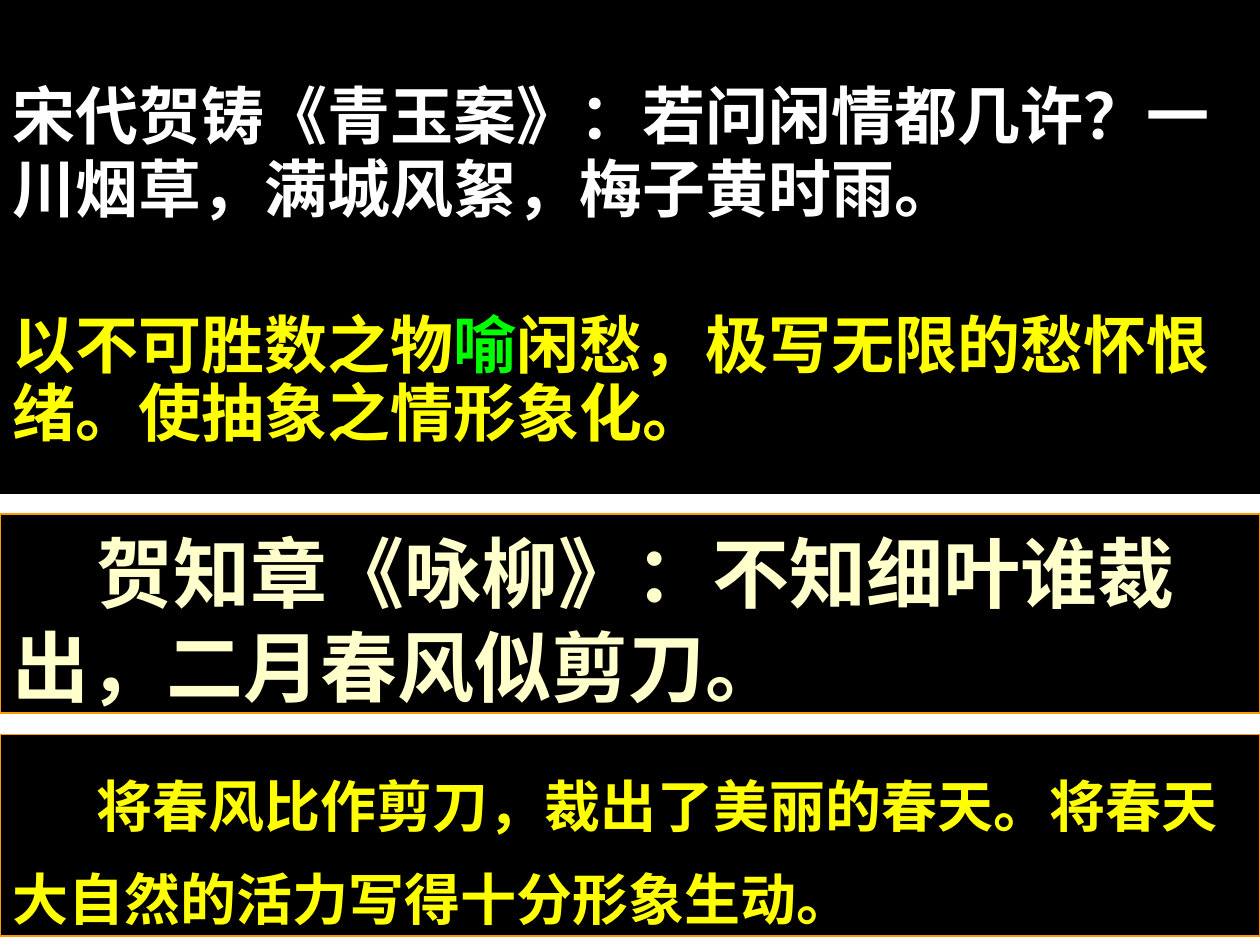
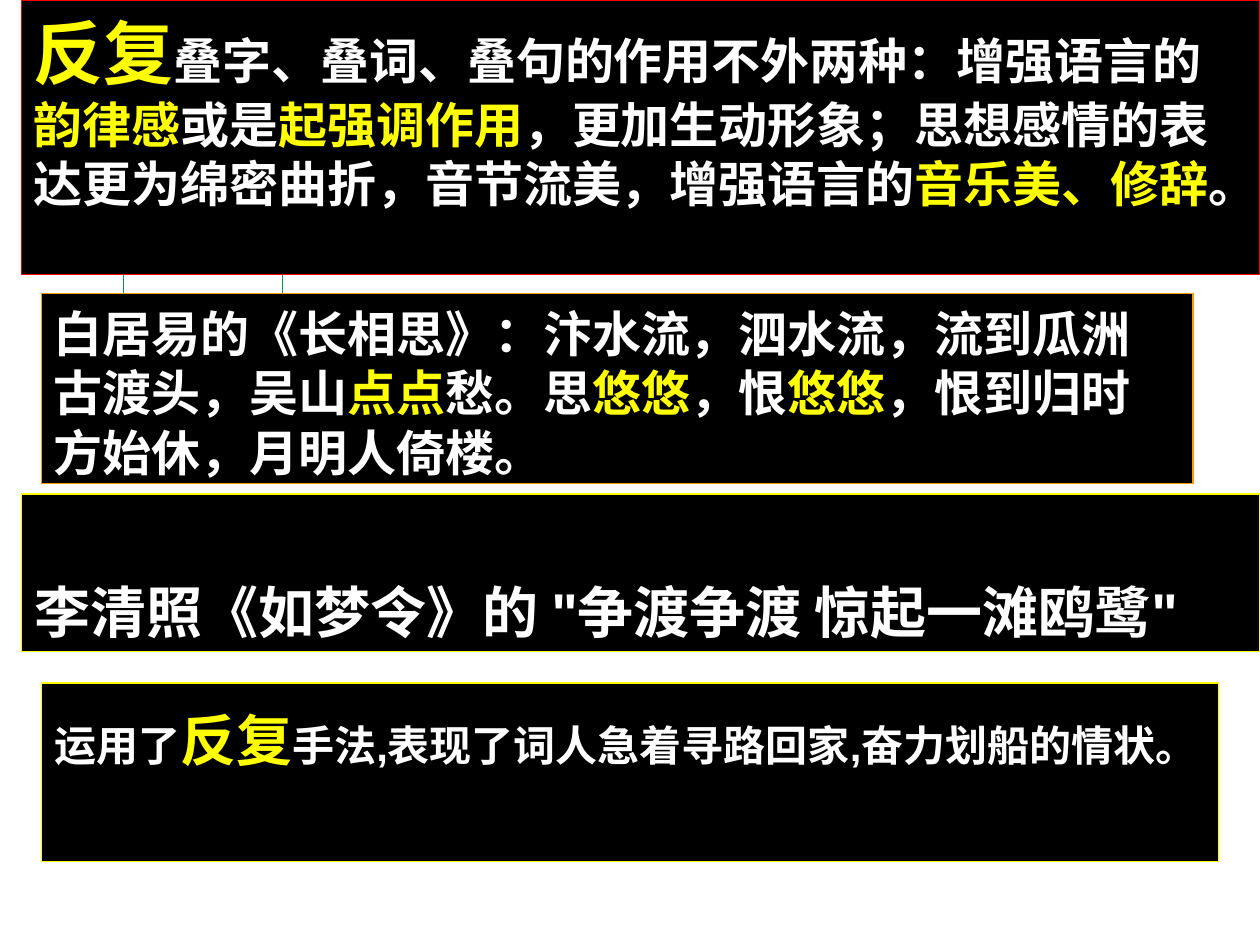
from dataclasses import dataclass

from lxml.etree import SubElement
from pptx import Presentation
from pptx.dml.color import RGBColor
from pptx.enum.shapes import MSO_SHAPE
from pptx.enum.text import MSO_ANCHOR, MSO_AUTO_SIZE, PP_ALIGN
from pptx.oxml.ns import qn
from pptx.util import Inches, Pt


@dataclass(frozen=True)
class Theme:
    """Colours, fonts and type sizes shared by the slides."""

    panel: str = "000000"
    white: str = "FFFFFF"
    yellow: str = "FFFF00"
    green: str = "00FF00"
    cream: str = "FFFFCC"
    orange: str = "FF9900"
    red: str = "FF0000"
    ornament: str = "0E9651"
    sans: str = "Arial"
    serif: str = "Times New Roman"
    chinese: str = "Noto Sans CJK SC"
    verse: int = 44
    opening: int = 40
    heading: int = 36
    comment: int = 32
    reading: int = 28
    small: int = 24


THEME = Theme()


def format_span(span, colour, size, font):
    """Format one run of text."""
    span.font.size = Pt(size)
    span.font.bold = True
    span.font.name = font
    span.font.color.rgb = RGBColor.from_string(colour)
    properties = span._r.get_or_add_rPr()
    SubElement(properties, qn("a:ea")).set("typeface", THEME.chinese)


def write_paragraph(para, spans, size, font, pitch, indent):
    """Fill a paragraph with (text, colour, optional size) spans."""
    properties = para._p.get_or_add_pPr()
    properties.set("marL", "0")
    properties.set("indent", str(Inches(indent)))
    SubElement(properties, qn("a:buNone"))
    para.alignment = PP_ALIGN.LEFT
    para.line_spacing = Pt(pitch)
    para.space_before = Pt(0)
    for text, colour, *own_size in spans:
        span = para.add_run()
        span.text = text
        format_span(span, colour, own_size[0] if own_size else size, font)


def fill_panel(panel, box, paragraphs, size, pitch, line=None, font=THEME.sans,
               anchor=MSO_ANCHOR.TOP, top=0.05, bottom=0.05, indent=0):
    """Place a black panel in its box and write its paragraphs."""
    panel.left, panel.top, panel.width, panel.height = map(Inches, box)
    panel.fill.solid()
    panel.fill.fore_color.rgb = RGBColor.from_string(THEME.panel)
    if line:
        panel.line.color.rgb = RGBColor.from_string(line)
        panel.line.width = Pt(0.75)
    else:
        panel.line.fill.background()
    frame = panel.text_frame
    frame.word_wrap = True
    frame.auto_size = MSO_AUTO_SIZE.NONE
    frame.vertical_anchor = anchor
    frame.margin_left = frame.margin_right = Inches(0.1)
    frame.margin_top, frame.margin_bottom = Inches(top), Inches(bottom)
    for number, spans in enumerate(paragraphs):
        para = frame.add_paragraph() if number else frame.paragraphs[0]
        write_paragraph(para, spans, size, font, pitch, indent)


def add_panel(page, box, paragraphs, size, pitch, line, **options):
    """Add a bordered rectangle with text."""
    panel = page.shapes.add_shape(MSO_SHAPE.RECTANGLE, *map(Inches, box))
    panel.shadow.inherit = False
    fill_panel(panel, box, paragraphs, size, pitch, line, **options)


def add_ornament(page, box):
    """Add the thin green square behind the panels."""
    square = page.shapes.add_shape(MSO_SHAPE.RECTANGLE, *map(Inches, box))
    square.shadow.inherit = False
    square.fill.background()
    square.line.color.rgb = RGBColor.from_string(THEME.ornament)
    square.line.width = Pt(0.5)
    page.shapes._spTree.insert(2, square._element)


def build_metaphor_slide(deck):
    """Build the slide with two verses and their metaphors."""
    page = deck.slides.add_slide(deck.slide_layouts[1])
    fill_panel(
        page.shapes.title, (0, 0, 10, 2.42),
        [[("宋代贺铸《青玉案》：若问闲情都几许？一川烟草，满城风絮，梅子黄时雨。", THEME.white)]],
        THEME.heading, 42, anchor=MSO_ANCHOR.BOTTOM, bottom=0.63)
    fill_panel(
        page.placeholders[1], (0, 2.42, 10, 1.5),
        [[("以不可胜数之物", THEME.yellow), ("喻", THEME.green),
          ("闲愁，极写无限的愁怀恨绪。使抽象之情形象化。", THEME.yellow)]],
        THEME.heading, 39, top=0.06)
    add_panel(
        page, (0, 4.08, 10, 1.58),
        [[("贺知章《咏柳》：不知细叶谁裁出，二月春风似剪刀。", THEME.cream)]],
        THEME.verse, 54, THEME.orange, font=THEME.serif, top=0.07, indent=0.67)
    add_panel(
        page, (0, 5.83, 10, 1.6),
        [[("将春风比作剪刀，裁出了美丽的春天。将春天大自然的活力写得十分形象生动。", THEME.yellow)]],
        THEME.comment, 53, THEME.orange, font=THEME.serif, top=0.09, indent=0.67)


def build_repetition_slide(deck):
    """Build the slide on repetition with its two examples."""
    page = deck.slides.add_slide(deck.slide_layouts[1])
    add_ornament(page, (0.98, 1.07, 1.26, 1.26))
    fill_panel(
        page.shapes.title, (0.17, 3.92, 9.83, 1.25),
        [[("李清照《如梦令》的 \"争渡争渡 惊起一滩鸥鹭\"", THEME.white)]],
        THEME.comment, 38, THEME.yellow, anchor=MSO_ANCHOR.BOTTOM)
    fill_panel(
        page.placeholders[1], (0.33, 5.42, 9.34, 1.42),
        [[("运用了", THEME.white), ("反复", THEME.yellow, THEME.comment),
          ("手法,表现了词人急着寻路回家,奋力划船的情状。", THEME.white)]],
        THEME.small, 46, THEME.yellow, top=0.07)
    add_panel(
        page, (0.17, 0, 9.83, 2.18),
        [[("反复", THEME.yellow, THEME.opening),
          ("叠字、叠词、叠句的作用不外两种：增强语言的", THEME.white),
          ("韵律感", THEME.yellow), ("或是", THEME.white),
          ("起强调作用", THEME.yellow),
          ("，更加生动形象；思想感情的表达更为绵密曲折，音节流美，增强语言的", THEME.white),
          ("音乐美、修辞", THEME.yellow), ("。", THEME.white)]],
        THEME.reading, 34, THEME.red, font=THEME.chinese, top=0.27)
    add_panel(
        page, (0.33, 2.33, 9.14, 1.51),
        [[("白居易的《长相思》：汴水流，泗水流，流到瓜洲", THEME.white)],
         [("古渡头，吴山", THEME.white), ("点点", THEME.yellow),
          ("愁。思", THEME.white), ("悠悠", THEME.yellow),
          ("，恨", THEME.white), ("悠悠", THEME.yellow),
          ("，恨到归时", THEME.white)],
         [("方始休，月明人倚楼。", THEME.white)]],
        THEME.reading, 34, THEME.orange, font=THEME.chinese,
        anchor=MSO_ANCHOR.MIDDLE, top=0.1)


def main():
    """Build and save the deck."""
    deck = Presentation()
    deck.slide_width, deck.slide_height = Inches(10), Inches(7.5)
    build_metaphor_slide(deck)
    build_repetition_slide(deck)
    deck.save("out.pptx")


if __name__ == "__main__":
    main()
